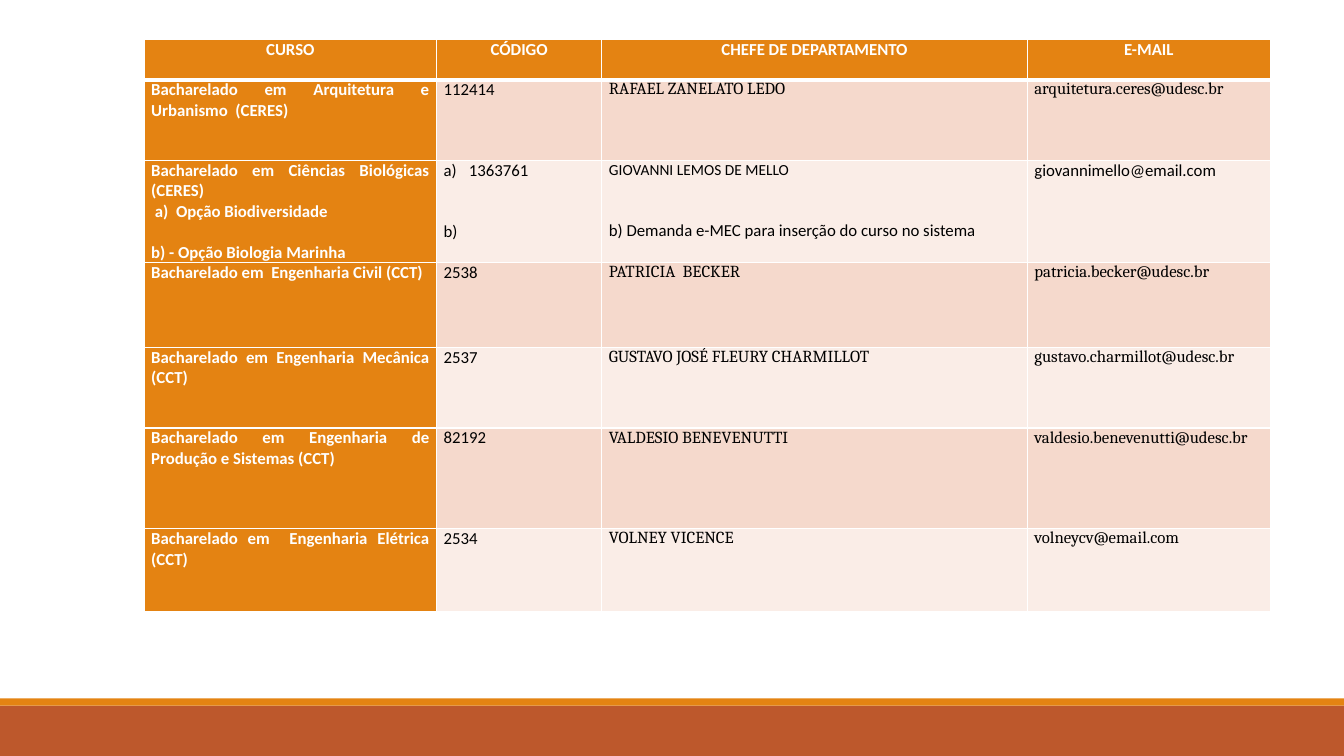
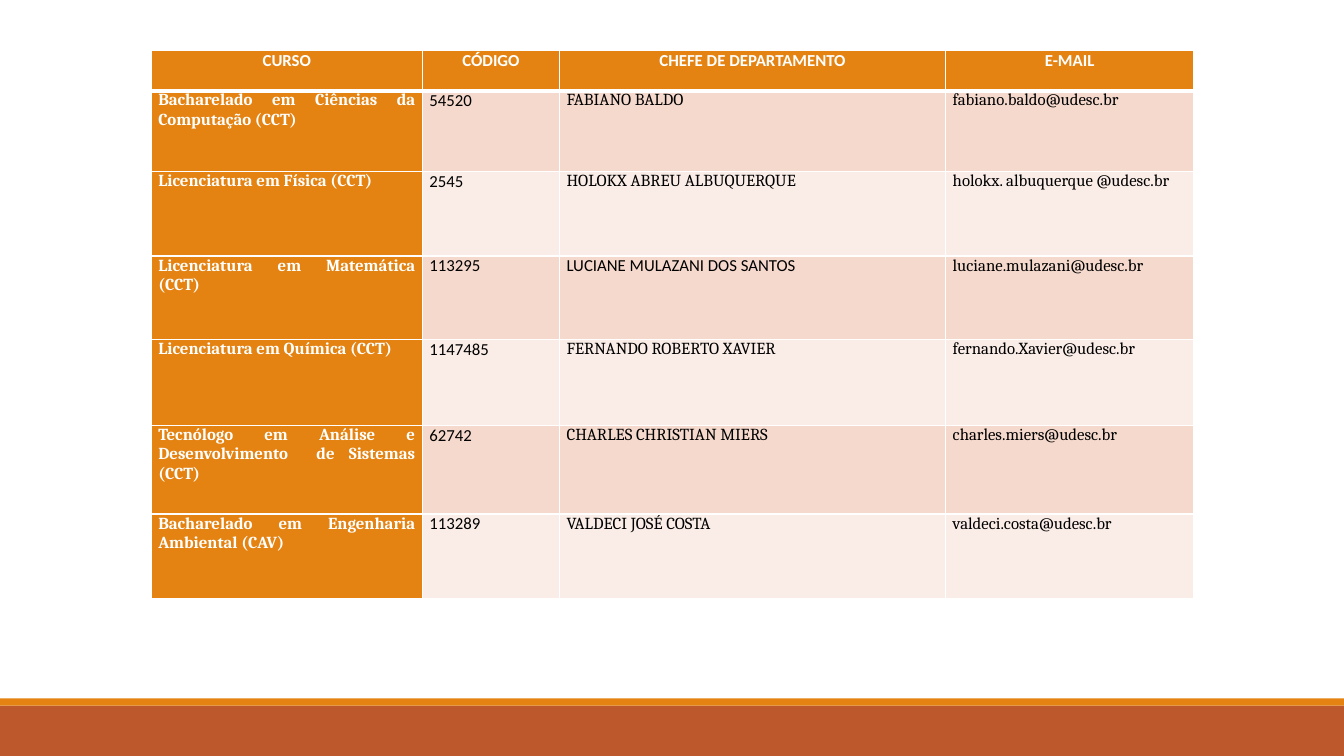
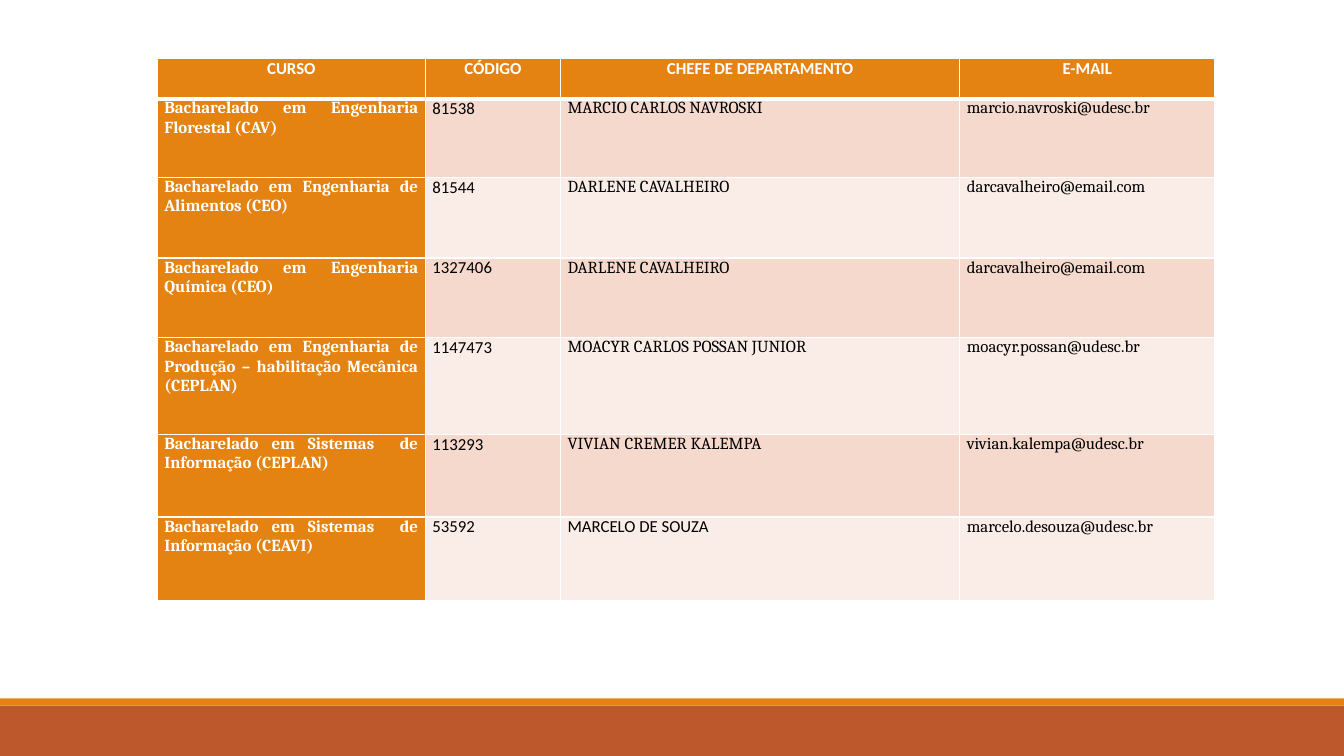
from pptx import Presentation
from pptx.dml.color import RGBColor
from pptx.enum.shapes import MSO_SHAPE
from pptx.enum.text import PP_ALIGN
from pptx.oxml.ns import qn
from pptx.util import Inches, Pt
from lxml.etree import SubElement

ORANGE, RUST, WHITE, BLACK = "E48312", "BD582C", "FFFFFF", "000000"
ROW_TINTS = ["F5D9CC", "FAEDE7"]
BANDS = [(7, 0.5, RUST), (6.93, 0.07, ORANGE)]
HEADINGS = ("CURSO", "CÓDIGO", "CHEFE DE DEPARTAMENTO", "E-MAIL")
LINE = Pt(14.6)  # height of one 12 pt line


def paint(target, colour):
    target.solid()
    target.fore_color.rgb = RGBColor.from_string(colour)


def add_borders(cell, bottom_width):
    """Give a cell white borders; they must come before its fill."""
    properties = cell._tc.get_or_add_tcPr()
    widths = {"a:lnL": 1, "a:lnR": 1, "a:lnT": 1, "a:lnB": bottom_width}
    for position, (side, width) in enumerate(widths.items()):
        border = SubElement(properties, qn(side), w=str(Pt(width)))
        SubElement(SubElement(border, qn("a:solidFill")), qn("a:srgbClr"), val=WHITE)
        properties.insert(position, border)


# Content of each slide
biology = (
    "Bacharelado em Ciências Biológicas (CERES)\n a)  Opção Biodiversidade\nb) - Opção Biologia Marinha",
    "1363761\nb)",
    "GIOVANNI LEMOS DE MELLO\nb) Demanda e-MEC para inserção do curso no sistema",
    "giovannimello@email.com",
)
departments = [
    {
        "corner": (1.43, 0.39),
        "columns": [2.9, 1.64, 4.22, 2.41],
        "heights": [0.4, 0.8, 1.01, 0.84, 0.8, 1, 0.82],
        "course_font": "Calibri",
        "rows": [
            ("Bacharelado em Arquitetura e Urbanismo  (CERES)", "112414",
             "RAFAEL ZANELATO LEDO", "arquitetura.ceres@udesc.br"),
            biology,
            ("Bacharelado em  Engenharia Civil (CCT)", "2538",
             "PATRICIA  BECKER", "patricia.becker@udesc.br"),
            ("Bacharelado em Engenharia Mecânica (CCT)", "2537",
             "GUSTAVO JOSÉ FLEURY CHARMILLOT", "gustavo.charmillot@udesc.br"),
            ("Bacharelado em Engenharia de Produção e Sistemas (CCT)", "82192",
             "VALDESIO BENEVENUTTI", "valdesio.benevenutti@udesc.br"),
            ("Bacharelado em  Engenharia Elétrica (CCT)", "2534",
             "VOLNEY VICENCE", "volneycv@email.com"),
        ],
    },
    {
        "corner": (1.5, 0.5),
        "columns": [2.69, 1.36, 3.83, 2.46],
        "heights": [0.4, 0.8, 0.84, 0.83, 0.85, 0.88, 0.84],
        "course_font": "Cambria",
        "rows": [
            ("Bacharelado em Ciências da Computação (CCT)", "54520",
             "FABIANO BALDO", "fabiano.baldo@udesc.br"),
            ("Licenciatura em Física (CCT)", "2545",
             "HOLOKX ABREU ALBUQUERQUE", "holokx. albuquerque @udesc.br"),
            ("Licenciatura em Matemática (CCT)", "113295",
             "LUCIANE MULAZANI DOS SANTOS", "luciane.mulazani@udesc.br"),
            ("Licenciatura em Química (CCT)", "1147485",
             "FERNANDO ROBERTO XAVIER", "fernando.Xavier@udesc.br"),
            ("Tecnólogo em Análise e Desenvolvimento  de Sistemas (CCT)", "62742",
             "CHARLES CHRISTIAN MIERS", "charles.miers@udesc.br"),
            ("Bacharelado em Engenharia Ambiental (CAV)", "113289",
             "VALDECI JOSÉ COSTA", "valdeci.costa@udesc.br"),
        ],
    },
    {
        "corner": (1.56, 0.58),
        "columns": [2.66, 1.34, 3.96, 2.53],
        "heights": [0.4, 0.78, 0.8, 0.79, 0.96, 0.82, 0.83],
        "course_font": "Cambria",
        "rows": [
            ("Bacharelado em Engenharia Florestal (CAV)", "81538",
             "MARCIO CARLOS NAVROSKI", "marcio.navroski@udesc.br"),
            ("Bacharelado em Engenharia de Alimentos (CEO)", "81544",
             "DARLENE CAVALHEIRO", "darcavalheiro@email.com"),
            ("Bacharelado em Engenharia Química (CEO)", "1327406",
             "DARLENE CAVALHEIRO", "darcavalheiro@email.com"),
            ("Bacharelado em Engenharia de Produção – habilitação Mecânica (CEPLAN)", "1147473",
             "MOACYR CARLOS POSSAN JUNIOR", "moacyr.possan@udesc.br"),
            ("Bacharelado em Sistemas  de Informação (CEPLAN)", "113293",
             "VIVIAN CREMER KALEMPA", "vivian.kalempa@udesc.br"),
            ("Bacharelado em Sistemas  de Informação (CEAVI)", "53592",
             "MARCELO DE SOUZA", "marcelo.desouza@udesc.br"),
        ],
    },
]
calibri_entries = {*biology, "LUCIANE MULAZANI DOS SANTOS", "MARCELO DE SOUZA"}

presentation = Presentation()
presentation.slide_width = Inches(13.33)
presentation.slide_height = Inches(7.5)

for department in departments:
    slide = presentation.slides.add_slide(presentation.slide_layouts[6])

    # Bands at the foot
    for top, height, colour in BANDS:
        band = slide.shapes.add_shape(
            MSO_SHAPE.RECTANGLE, 0, Inches(top), presentation.slide_width, Inches(height))
        band.shadow.inherit = False
        paint(band.fill, colour)
        band.line.fill.background()

    # Table grid
    left, top = department["corner"]
    columns, heights = department["columns"], department["heights"]
    courses = slide.shapes.add_table(
        len(heights), len(columns), Inches(left), Inches(top),
        Inches(sum(columns)), Inches(sum(heights))).table
    for column, width in zip(courses.columns, columns):
        column.width = Inches(width)
    for row, height in zip(courses.rows, heights):
        row.height = Inches(height)

    # Table cells
    for r, entries in enumerate([HEADINGS] + department["rows"]):
        for c, entry in enumerate(entries):
            cell = courses.cell(r, c)
            heading = r == 0
            strong = heading or c == 0
            if heading or c == 1 or entry in calibri_entries:
                font_name = "Calibri"
            else:
                font_name = department["course_font"] if c == 0 else "Cambria"
            cell.margin_left = cell.margin_right = Inches(0.07)
            cell.margin_top = cell.margin_bottom = 0
            paint(cell.fill, ORANGE if strong else ROW_TINTS[(r - 1) % 2])
            add_borders(cell, 3 if heading else 1)
            cell.text_frame.text = entry
            for paragraph in cell.text_frame.paragraphs:
                paragraph.alignment = PP_ALIGN.CENTER if heading else PP_ALIGN.JUSTIFY
                for run in paragraph.runs:
                    run.font.name = font_name
                    run.font.size = Pt(12)
                    run.font.bold = strong
                    paint(run.font.fill, WHITE if strong else BLACK)

    # Biology lists its two options, a) and b), in each cell
    if biology in department["rows"]:
        course, code, chief = [
            courses.cell(department["rows"].index(biology) + 1, c).text_frame.paragraphs
            for c in range(3)]
        course[-1].space_before = LINE
        code[-1].space_before = chief[-1].space_before = 2 * LINE
        chief[0].runs[0].font.size = Pt(11)
        numbering = code[0]._p.get_or_add_pPr()
        numbering.set("marL", str(Inches(0.25)))
        numbering.set("indent", str(-Inches(0.25)))
        SubElement(numbering, qn("a:buAutoNum"), type="alphaLcParenR")

presentation.save("out.pptx")
